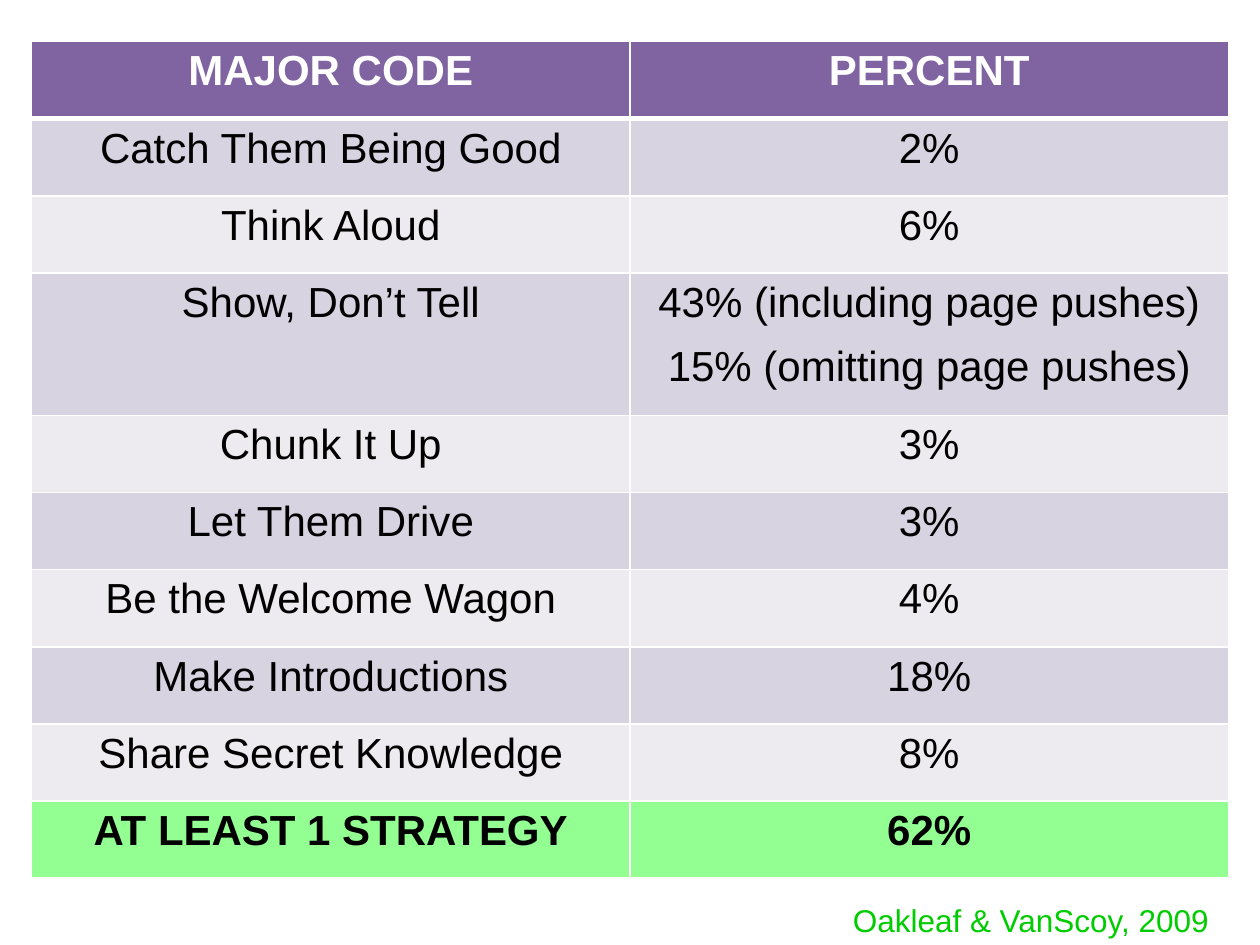
from lxml import etree
from pptx import Presentation
from pptx.dml.color import RGBColor
from pptx.enum import text
from pptx.oxml import ns
from pptx.util import Inches, Pt

WHITE = RGBColor(0xFF, 0xFF, 0xFF)
BLACK = RGBColor(0, 0, 0)
PURPLE = RGBColor(0x80, 0x64, 0xA2)
LILAC = RGBColor(0xD8, 0xD3, 0xE0)
PALE = RGBColor(0xED, 0xEA, 0xF0)
LIME = RGBColor(0x93, 0xFF, 0x93)
GREEN = RGBColor(0, 0xCC, 0)

ROWS = [
    ("MAJOR CODE", "PERCENT"),
    ("Catch Them Being Good", "2%"),
    ("Think Aloud", "6%"),
    ("Show, Don’t Tell", "43% (including page pushes)\n15% (omitting page pushes)"),
    ("Chunk It Up", "3%"),
    ("Let Them Drive", "3%"),
    ("Be the Welcome Wagon", "4%"),
    ("Make Introductions", "18%"),
    ("Share Secret Knowledge", "8%"),
    ("AT LEAST 1 STRATEGY", "62%"),
]


def style(run, size, color, bold=False):
    run.font.name = "Arial"
    run.font.size = Pt(size)
    run.font.bold = bold
    run.font.color.rgb = color


def border(cell, top, bottom):
    props = cell._tc.get_or_add_tcPr()
    for side, width in (("L", 1), ("R", 1), ("T", top), ("B", bottom)):
        line = etree.SubElement(props, ns.qn(f"a:ln{side}"), w=str(Pt(width)))
        fill = etree.SubElement(line, ns.qn("a:solidFill"))
        etree.SubElement(fill, ns.qn("a:srgbClr"), val=str(WHITE))


def fill_cell(cell, words, row):
    head, total = row == 0, row == len(ROWS) - 1
    border(cell, 3 if row == 1 else 1, 3 if head else 1)
    cell.fill.solid()
    band = LILAC if row % 2 else PALE
    cell.fill.fore_color.rgb = PURPLE if head else LIME if total else band
    cell.text_frame.text = words
    for para in cell.text_frame.paragraphs:
        para.alignment = text.PP_ALIGN.CENTER
        para.space_before = para.space_after = Pt(5)
        for run in para.runs:
            style(run, 24, WHITE if head else BLACK, head or total)


def add_codes(slide, left, top, width, height):
    table = slide.shapes.add_table(len(ROWS), 2, left, top, width, height).table
    tall = Inches(1.13)
    for col in table.columns:
        col.width = width // 2
    for row, pair in enumerate(ROWS):
        double = any("\n" in words for words in pair)
        table.rows[row].height = tall if double else (height - tall) // (len(ROWS) - 1)
        for col, words in enumerate(pair):
            fill_cell(table.cell(row, col), words, row)


def add_credit(slide, left, top, width, height):
    frame = slide.shapes.add_textbox(left, top, width, height).text_frame
    frame.word_wrap = False
    frame.auto_size = text.MSO_AUTO_SIZE.SHAPE_TO_FIT_TEXT
    frame.text = "Oakleaf & VanScoy, 2009"
    style(frame.paragraphs[0].runs[0], 18, GREEN)


def main():
    deck = Presentation()
    deck.slide_width, deck.slide_height = Inches(10), Inches(7.5)
    slide = deck.slides.add_slide(deck.slide_layouts[6])
    add_credit(slide, Inches(6.67), Inches(7.1), Inches(3.05), Inches(0.4))
    add_codes(slide, Inches(0.25), Inches(0.33), Inches(9.5), Inches(6.64))
    deck.save("out.pptx")


if __name__ == "__main__":
    main()
